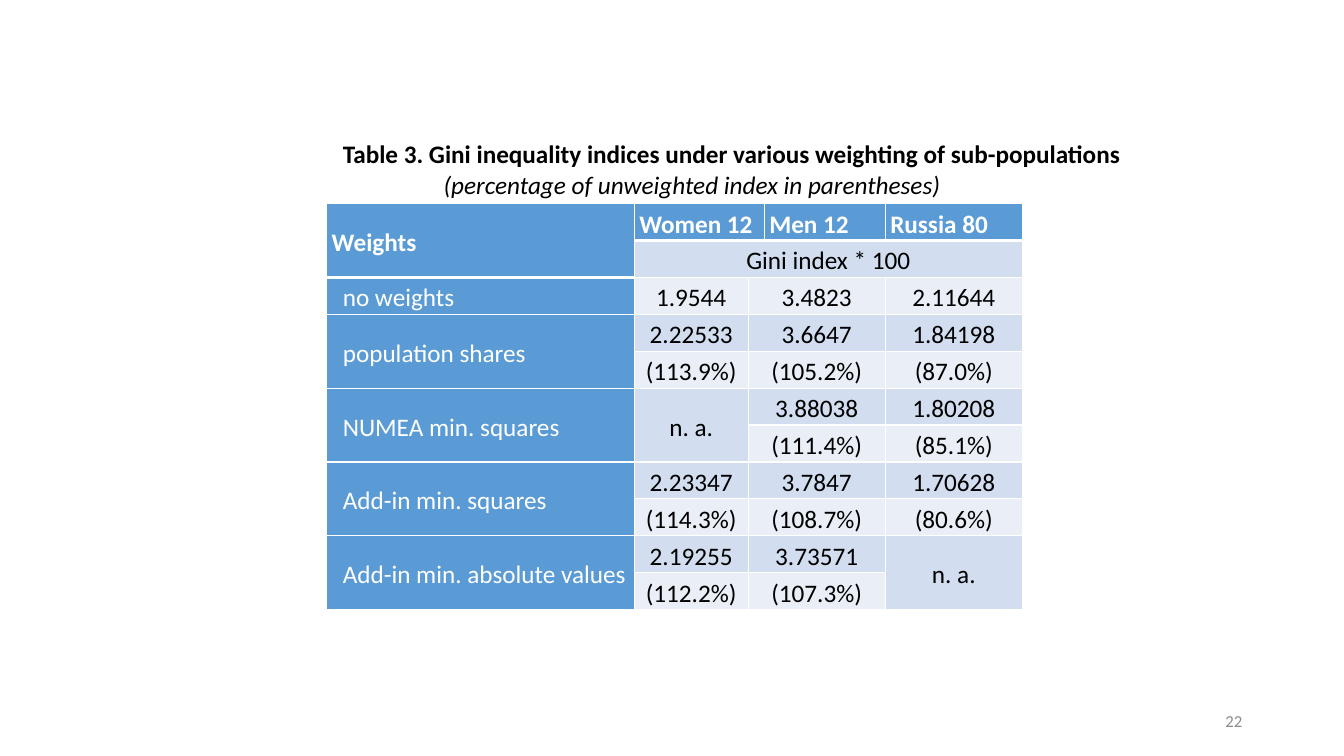
from lxml import etree
from pptx import Presentation
from pptx.dml.color import RGBColor
from pptx.enum.text import MSO_ANCHOR, MSO_AUTO_SIZE, PP_ALIGN
from pptx.oxml.ns import qn
from pptx.util import Inches, Pt

LEFT, CENTER, RIGHT = PP_ALIGN.LEFT, PP_ALIGN.CENTER, PP_ALIGN.RIGHT
MIDDLE = MSO_ANCHOR.MIDDLE
NO_AUTOFIT = MSO_AUTO_SIZE.NONE

THEME = {
    "font": "Calibri",
    "body_size": Pt(18),
    "number_size": Pt(12),
    "text": "000000",
    "light_text": "FFFFFF",
    "number": "8C8C8C",
    "accent": "5B9BD5",
    "bands": ("EAEFF7", "D2DEEF"),
    "border": "FFFFFF",
    "thin": Pt(1),
    "thick": Pt(3),
}

# A cell marked ← belongs to the cell on its left, ↑ to the cell above.
GRID = [
    ["Weights", "Women 12", "←", "Men 12", "Russia 80"],
    ["↑", "Gini index * 100", "←", "←", "←"],
    ["no weights", "1.9544", "3.4823", "←", "2.11644"],
    ["population shares", "2.22533", "3.6647", "←", "1.84198"],
    ["↑", "(113.9%)", "(105.2%)", "←", "(87.0%)"],
    ["NUMEA min. squares", "n. a.", "3.88038", "←", "1.80208"],
    ["↑", "↑", "(111.4%)", "←", "(85.1%)"],
    ["Add-in min. squares", "2.23347", "3.7847", "←", "1.70628"],
    ["↑", "(114.3%)", "(108.7%)", "←", "(80.6%)"],
    ["Add-in min. absolute values", "2.19255", "3.73571", "←", "n. a."],
    ["↑", "(112.2%)", "(107.3%)", "←", "↑"],
]
COLUMN_WIDTHS = (3.05, 1.13, 0.16, 1.2, 1.36)


def write(paragraph, text, alignment, color, size=THEME["body_size"], bold=False, italic=False):
    paragraph.alignment = alignment
    run = paragraph.add_run()
    run.text = text
    font_format = {"name": THEME["font"], "size": size, "bold": bold, "italic": italic}
    for name, value in font_format.items():
        setattr(run.font, name, value)
    run.font.color.rgb = RGBColor.from_string(color)


def add_border(cell, side, width):
    line = etree.SubElement(cell._tc.get_or_add_tcPr(), qn(f"a:ln{side}"), w=str(width))
    fill = etree.SubElement(line, qn("a:solidFill"))
    etree.SubElement(fill, qn("a:srgbClr"), val=THEME["border"])


presentation = Presentation()
presentation.slide_width = Inches(13.33)
presentation.slide_height = Inches(7.5)
slide = presentation.slides.add_slide(presentation.slide_layouts[5])

# Table
table = slide.shapes.add_table(
    len(GRID), len(COLUMN_WIDTHS),
    Inches(3.24), Inches(2.02), Inches(sum(COLUMN_WIDTHS)), Inches(4.03),
).table
table.first_row = False
table.horz_banding = False
for column, width in zip(table.columns, COLUMN_WIDTHS):
    column.width = Inches(width)

for row, texts in enumerate(GRID):
    for column, text in enumerate(texts):
        cell = table.cell(row, column)
        is_label = column == 0
        is_accent = is_label or row == 0
        last_header_row = 1 if is_label else 0
        is_indented = is_label and row > 0
        cell_format = {
            "margin_left": Inches(0.16 if is_indented else 0.05),
            "margin_right": Inches(0.05),
            "margin_top": 0,
            "margin_bottom": 0,
            "vertical_anchor": MIDDLE,
        }
        for name, value in cell_format.items():
            setattr(cell, name, value)

        border_widths = {
            "L": THEME["thin"],
            "R": THEME["thin"],
            "T": THEME["thick"] if row == last_header_row + 1 else THEME["thin"],
            "B": THEME["thick"] if row == last_header_row else THEME["thin"],
        }
        for side, width in border_widths.items():
            add_border(cell, side, width)
        cell.fill.solid()
        color = THEME["accent"] if is_accent else THEME["bands"][row % 2]
        cell.fill.fore_color.rgb = RGBColor.from_string(color)

        if text in "←↑":
            continue
        paragraph = cell.text_frame.paragraphs[0]
        paragraph.line_spacing = 1.15
        write(paragraph, text, LEFT if is_accent else CENTER,
              THEME["light_text"] if is_accent else THEME["text"], bold=row == 0)

        last_row, last_column = row, column
        while last_column + 1 < len(texts) and texts[last_column + 1] == "←":
            last_column += 1
        while last_row + 1 < len(GRID) and GRID[last_row + 1][column] == "↑":
            last_row += 1
        if (last_row, last_column) != (row, column):
            cell.merge(table.cell(last_row, last_column))

# Caption
caption = slide.shapes.title
caption.left, caption.top = Inches(3.3), Inches(1.32)
caption.width, caption.height = Inches(7.97), Inches(0.71)
caption_frame = caption.text_frame
caption_frame.auto_size = NO_AUTOFIT
caption_frame.word_wrap = False
caption_frame.vertical_anchor = MIDDLE
write(caption_frame.paragraphs[0],
      "Table 3. Gini inequality indices under various weighting of sub-populations",
      LEFT, THEME["text"], bold=True)
subtitle = caption_frame.add_paragraph()
write(subtitle, "(percentage of unweighted index in parentheses)", LEFT, THEME["text"], italic=True)
subtitle._p.get_or_add_pPr().set("marL", str(Inches(1)))

# Slide number
number_box = slide.shapes.add_textbox(Inches(9.42), Inches(6.95), Inches(3), Inches(0.4))
number_frame = number_box.text_frame
number_frame.word_wrap = True
number_frame.vertical_anchor = MIDDLE
write(number_frame.paragraphs[0], "22", RIGHT, THEME["number"], THEME["number_size"])

presentation.save("out.pptx")
